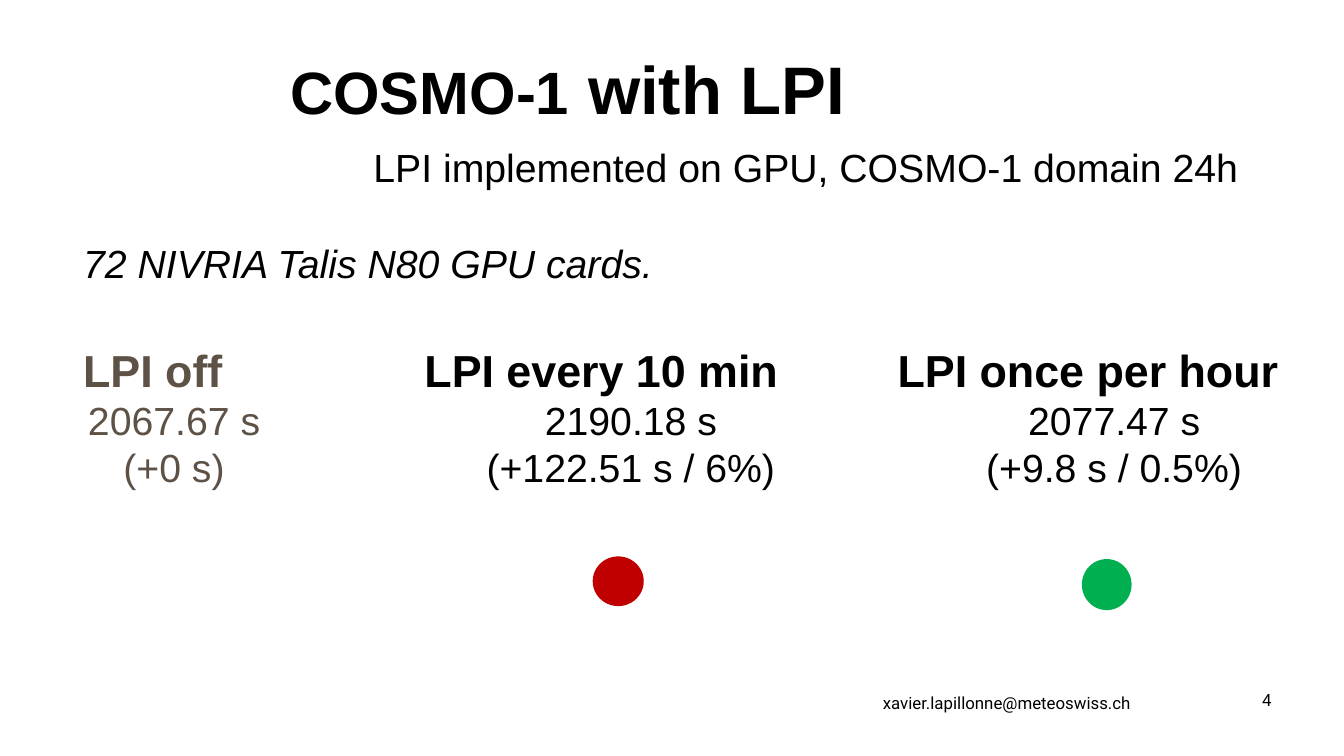
from dataclasses import dataclass

from pptx import Presentation
from pptx import util as u
from pptx.dml.color import RGBColor
from pptx.enum import shapes, text


@dataclass(frozen=True)
class Theme:
    font: str = "Arial"
    footer_font: str = "Roboto"
    ink: str = "000000"
    muted: str = "5E5247"
    bad: str = "C00000"
    good: str = "00B050"
    title: int = 36
    title_model: int = 32
    heading: int = 24
    body: int = 21
    footer: int = 9


THEME = Theme()
TITLE_ONLY = 5


def place(shape, box):
    shape.left, shape.top, shape.width, shape.height = map(u.Inches, box)


def style(font, size, color=THEME.ink, name=THEME.font, bold=False, italic=False):
    font.name, font.size = name, u.Pt(size)
    font.bold, font.italic = bold, italic
    font.color.rgb = RGBColor.from_string(color)


def add_text(slide, box, lines):
    """Add a text box; each line is (wording, alignment, font options)."""
    frame = slide.shapes.add_textbox(*map(u.Inches, box)).text_frame
    frame.word_wrap = True
    for i, (wording, align, options) in enumerate(lines):
        paragraph = frame.add_paragraph() if i else frame.paragraphs[0]
        paragraph.text = wording
        paragraph.alignment = align
        style(paragraph.font, **options)
    return frame


def add_title(slide, box):
    title = slide.shapes.title
    place(title, box)
    frame = title.text_frame
    frame.auto_size = text.MSO_AUTO_SIZE.NONE
    frame.vertical_anchor = text.MSO_ANCHOR.TOP
    heading = frame.paragraphs[0]
    heading.alignment = text.PP_ALIGN.LEFT
    for wording, size in (("COSMO-1", THEME.title_model), (" with LPI", THEME.title)):
        run = heading.add_run()
        run.text = wording
        style(run.font, size, bold=True)


def add_setup(slide, box):
    """Experiment setup: the domain, and the hardware below it to the left."""
    left, top, width, height = box
    align = text.PP_ALIGN.LEFT
    add_text(slide, (left + 2.16, top, width - 2.16, height),
             [("LPI implemented on GPU, COSMO-1 domain 24h", align,
               dict(size=THEME.body))])
    add_text(slide, (left, top + 0.71, 4.65, 0.81),
             [("72 NIVRIA Talis N80 GPU cards.", align,
               dict(size=THEME.body, italic=True))])


def add_timing(slide, box, heading, runtime, overhead, color):
    value = dict(size=THEME.body, color=color)
    add_text(slide, box, [
        (heading, text.PP_ALIGN.LEFT, dict(size=THEME.heading, color=color, bold=True)),
        (runtime, text.PP_ALIGN.CENTER, value),
        (overhead, text.PP_ALIGN.CENTER, value),
    ])


def add_verdict(slide, box, color):
    dot = slide.shapes.add_shape(shapes.MSO_SHAPE.OVAL, *map(u.Inches, box))
    dot.shadow.inherit = False
    dot.fill.solid()
    dot.fill.fore_color.rgb = RGBColor.from_string(color)
    dot.line.fill.background()


def add_footer(slide, box):
    left, top, width, height = box
    options = dict(size=THEME.footer, name=THEME.footer_font)
    align = text.PP_ALIGN.RIGHT
    contact = add_text(slide, (left, top, 3.16, height),
                       [("xavier.lapillonne@meteoswiss.ch", align, options)])
    contact.margin_left, contact.margin_right = 0, u.Inches(0.04)
    contact.vertical_anchor = text.MSO_ANCHOR.MIDDLE
    add_text(slide, (left + width - 1.18, top, 1.18, 0.25),
             [("4", align, options)])


def main():
    deck = Presentation()
    deck.slide_width = u.Inches(10)
    deck.slide_height = deck.slide_width * 9 // 16
    slide = deck.slides.add_slide(deck.slide_layouts[TITLE_ONLY])

    add_title(slide, (2.06, 0.3, 5.33, 0.71))
    add_setup(slide, (0.52, 1.02, 8.85, 0.45))

    # Run times for the three LPI settings
    timings = [
        (0.52, 1.55, "LPI off", "2067.67 s", "(+0 s)", THEME.muted),
        (3.06, 3.27, "LPI every 10 min", "2190.18 s", "(+122.51 s / 6%)", THEME.ink),
        (6.58, 3.42, "LPI once per hour", "2077.47 s", "(+9.8 s / 0.5%)", THEME.ink),
    ]
    for left, width, *wording in timings:
        add_timing(slide, (left, 2.5, width, 1.21), *wording)

    # Verdict on each setting's cost
    add_verdict(slide, (4.41, 4.14, 0.38, 0.37), THEME.bad)
    add_verdict(slide, (8.05, 4.16, 0.37, 0.38), THEME.good)

    add_footer(slide, (5.29, 5.08, 4.27, 0.3))
    deck.save("out.pptx")


if __name__ == "__main__":
    main()
